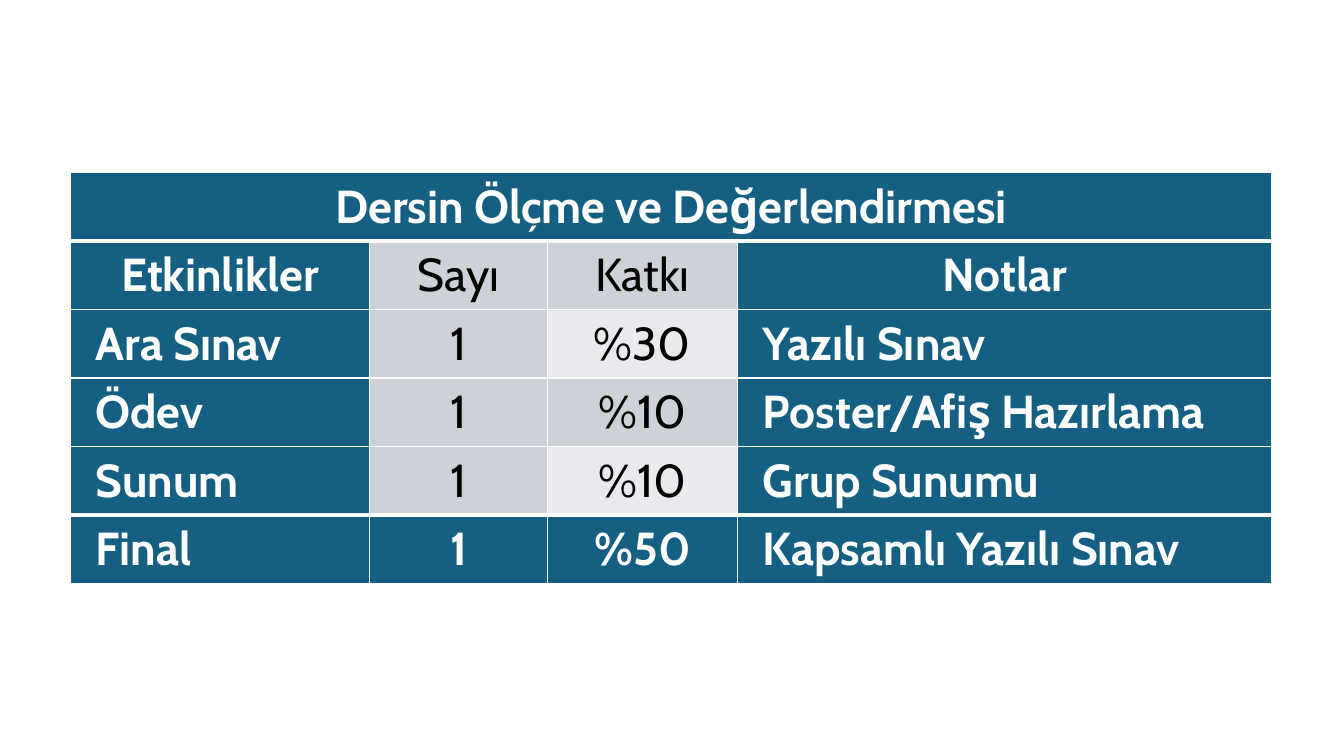
from lxml import etree
from pptx import Presentation
from pptx.dml.color import RGBColor
from pptx.enum.text import MSO_ANCHOR, PP_ALIGN
from pptx.oxml.ns import qn
from pptx.util import Pt

MIDDLE = MSO_ANCHOR.MIDDLE
LEFT, CENTER = PP_ALIGN.LEFT, PP_ALIGN.CENTER

WHITE = RGBColor(0xFF, 0xFF, 0xFF)
BLACK = RGBColor(0x00, 0x00, 0x00)
BLUE = RGBColor(0x15, 0x60, 0x82)
GRAY = RGBColor(0xCC, 0xD2, 0xD8)
PALE = RGBColor(0xE8, 0xEA, 0xED)

TITLE = "Dersin Ölçme ve Değerlendirmesi"
ROWS = [
    [TITLE, "", "", ""],
    ["Etkinlikler", "Sayı", "Katkı", "Notlar"],
    ["Ara Sınav", "1", "%30", "Yazılı Sınav"],
    ["Ödev", "1", "%10", "Poster/Afiş Hazırlama"],
    ["Sunum", "1", "%10", "Grup Sunumu"],
    ["Final", "1", "%50", "Kapsamlı Yazılı Sınav"],
]
WIDTHS = [213.8, 126.7, 136.1, 381.6]
HEIGHT = 48.96
LAST = len(ROWS) - 1


class Deck:
    font = "Cabin"
    size = 33
    inset = 18

    def __init__(self, wide, high):
        self.prs = Presentation()
        self.prs.slide_width, self.prs.slide_height = Pt(wide), Pt(high)
        self.slide = self.prs.slides.add_slide(self.prs.slide_layouts[6])

    def table(self, left, top, widths, high, count):
        table = self.slide.shapes.add_table(
            count, len(widths), Pt(left), Pt(top),
            Pt(sum(widths)), Pt(high * count)).table
        table.horz_banding = False
        for col, wide in zip(table.columns, widths):
            col.width = Pt(wide)
        for row in table.rows:
            row.height = Pt(high)
        return table

    def cell(self, cell, text, fill, ink, bold, align):
        cell.fill.solid()
        cell.fill.fore_color.rgb = fill
        cell.vertical_anchor = MIDDLE
        cell.margin_left = cell.margin_right = Pt(self.inset)
        cell.margin_top = cell.margin_bottom = 0
        cell.text_frame.text = text
        para = cell.text_frame.paragraphs[0]
        para.alignment = align
        for run in para.runs:
            font = run.font
            font.name, font.size, font.bold = self.font, Pt(self.size), bold
            font.color.rgb = ink

    def border(self, cell, color, left=1, right=1, top=1, bottom=1):
        """Draw the four cell edges; widths are in points."""
        props = cell._tc.get_or_add_tcPr()
        edges = {"lnL": left, "lnR": right, "lnT": top, "lnB": bottom}
        for i, (tag, width) in enumerate(edges.items()):
            line = etree.Element(qn("a:" + tag), w=str(Pt(width)))
            fill = etree.SubElement(line, qn("a:solidFill"))
            etree.SubElement(fill, qn("a:srgbClr"), val=str(color))
            props.insert(i, line)


def shade(r, c):
    if r in (0, LAST) or c in (0, 3):
        return BLUE
    return PALE if c == 2 and r % 2 == 0 else GRAY


def main():
    deck = Deck(960, 540)
    table = deck.table(50.4, 123.1, WIDTHS, HEIGHT, len(ROWS))
    for r, row in enumerate(ROWS):
        for c, text in enumerate(row):
            cell = table.cell(r, c)
            fill = shade(r, c)
            dark = fill == BLUE
            align = CENTER if r < 2 or c in (1, 2) else LEFT
            deck.cell(cell, text, fill, WHITE if dark else BLACK, dark, align)
            deck.border(cell, WHITE, top=3 if r in (1, LAST) else 1,
                        bottom=3 if r in (0, LAST - 1) else 1)
    table.cell(0, 0).merge(table.cell(0, 3))
    deck.prs.save("out.pptx")


if __name__ == "__main__":
    main()
